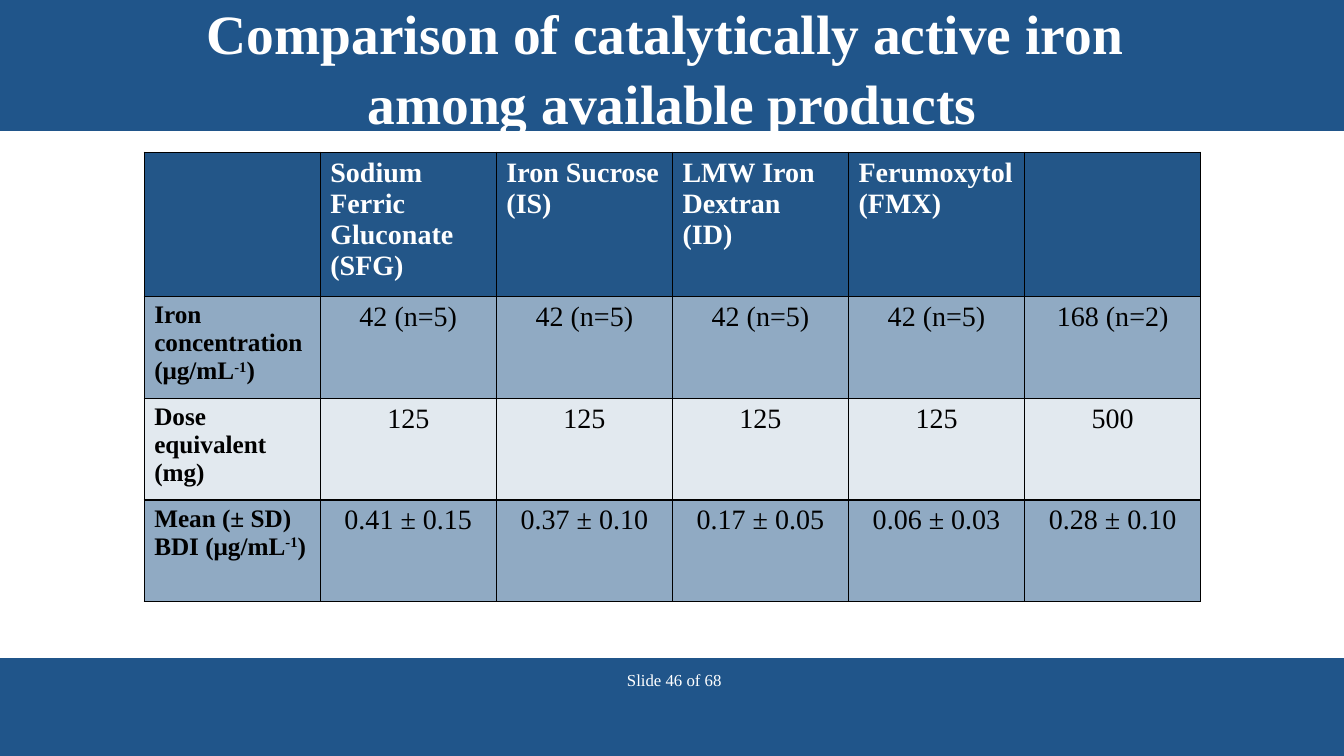
from lxml import etree
from pptx import Presentation
from pptx.dml.color import RGBColor
from pptx.enum.shapes import MSO_SHAPE
from pptx.enum.text import MSO_ANCHOR, MSO_AUTO_SIZE, PP_ALIGN
from pptx.oxml.ns import qn
from pptx.util import Inches, Pt

RECTANGLE = MSO_SHAPE.RECTANGLE
MIDDLE = MSO_ANCHOR.MIDDLE
NO_AUTOFIT = MSO_AUTO_SIZE.NONE
LEFT, CENTER = PP_ALIGN.LEFT, PP_ALIGN.CENTER

FONT = "Times New Roman"
BAND_BLUE, TABLE_BLUE = "20558A", "235688"
WHITE, BLACK = "FFFFFF", "000000"
WIDTH, HEIGHT = 13.33, 7.5
EXPONENT = "-1"

TITLE = "Comparison of catalytically active iron \vamong available products"
PRODUCTS = ["", "Sodium Ferric Gluconate\n(SFG)", "Iron Sucrose\n(IS)",
            "LMW Iron Dextran\n(ID)", "Ferumoxytol\n(FMX)", ""]
MEASURES = [
    ["Iron concentration (μg/mL-1)"] + ["42 (n=5)"] * 4 + ["168 (n=2)"],
    ["Dose equivalent (mg)"] + ["125"] * 4 + ["500"],
    ["Mean (± SD) BDI (μg/mL-1)", "0.41 ± 0.15", "0.37 ± 0.10",
     "0.17 ± 0.05", "0.06 ± 0.03", "0.28 ± 0.10"],
]
ROW_HEIGHTS = [1.43, 1.01, 1.01, 1.01]
ROW_OPACITIES = [100, 50, 13, 50]


def rgb(color):
    return RGBColor.from_string(color)


def style_text(frame, size, color, bold=False, align=LEFT):
    for paragraph in frame.paragraphs:
        paragraph.alignment = align
        font = paragraph.font
        font.name, font.size, font.bold = FONT, Pt(size), bold
        font.color.rgb = rgb(color)


def add_band(slide, top, height):
    band = slide.shapes.add_shape(RECTANGLE, 0, Inches(top), Inches(WIDTH), Inches(height))
    band.fill.solid()
    band.fill.fore_color.rgb = rgb(BAND_BLUE)
    band.line.fill.background()
    band.shadow.inherit = False


def add_header(slide, height):
    add_band(slide, 0, height)
    title = slide.shapes.title
    slide.shapes.element.append(title.element)  # bring the title in front of its band
    title.left, title.top = 0, 0
    title.width, title.height = Inches(WIDTH), Inches(height)
    frame = title.text_frame
    frame.text = TITLE
    frame.auto_size = NO_AUTOFIT
    frame.vertical_anchor = MIDDLE
    style_text(frame, 39.6, WHITE, True, CENTER)
    frame.paragraphs[0].line_spacing = 1.05


def add_footer(slide, top, height):
    add_band(slide, top, height)
    page_box = slide.shapes.add_textbox(Inches(6.12), Inches(top + 0.07), Inches(1.27), Inches(0.3))
    page_box.text_frame.text = "Slide 46 of 68"
    style_text(page_box.text_frame, 12, WHITE)


def write_label(cell, label):
    """Write a row label, raising the exponent of its unit."""
    before, exponent, after = label.partition(EXPONENT)
    paragraph = cell.text_frame.paragraphs[0]
    for part in filter(None, (before, exponent, after)):
        run = paragraph.add_run()
        run.text = part
        if part == EXPONENT:
            run.font._element.set("baseline", "30000")
    style_text(cell.text_frame, 18, BLACK, True)


def paint_cell(cell, opacity):
    """Fill a cell with translucent blue and frame it in black."""
    cell.fill.solid()
    cell.fill.fore_color.rgb = rgb(TABLE_BLUE)
    properties = cell._tc.get_or_add_tcPr()
    if opacity < 100:
        color = properties.find(".//" + qn("a:srgbClr"))
        etree.SubElement(color, qn("a:alpha"), val=str(opacity * 1000))
    for position, side in enumerate(("lnL", "lnR", "lnT", "lnB")):
        border = etree.Element(qn("a:" + side), w=str(Pt(1)))
        fill = etree.SubElement(border, qn("a:solidFill"))
        etree.SubElement(fill, qn("a:srgbClr"), val=BLACK)
        properties.insert(position, border)


def add_iron_table(slide, left, top, width):
    rows = [PRODUCTS] + MEASURES
    table = slide.shapes.add_table(
        len(rows), len(PRODUCTS), Inches(left), Inches(top),
        Inches(width), Inches(sum(ROW_HEIGHTS))).table
    table.horz_banding = False
    for r, values in enumerate(rows):
        table.rows[r].height = Inches(ROW_HEIGHTS[r])
        for c, value in enumerate(values):
            cell = table.cell(r, c)
            paint_cell(cell, ROW_OPACITIES[r])
            if r and c == 0:
                write_label(cell, value)
                continue
            cell.text = value
            if r == 0:
                style_text(cell.text_frame, 20, WHITE, True)
            else:
                style_text(cell.text_frame, 20, BLACK, align=CENTER)


def main():
    deck = Presentation()
    deck.slide_width, deck.slide_height = Inches(WIDTH), Inches(HEIGHT)
    slide = deck.slides.add_slide(deck.slide_layouts.get_by_name("Title Only"))
    add_header(slide, 1.3)
    add_iron_table(slide, 1.43, 1.51, 10.48)
    add_footer(slide, 6.53, HEIGHT - 6.53)
    deck.save("out.pptx")


if __name__ == "__main__":
    main()
